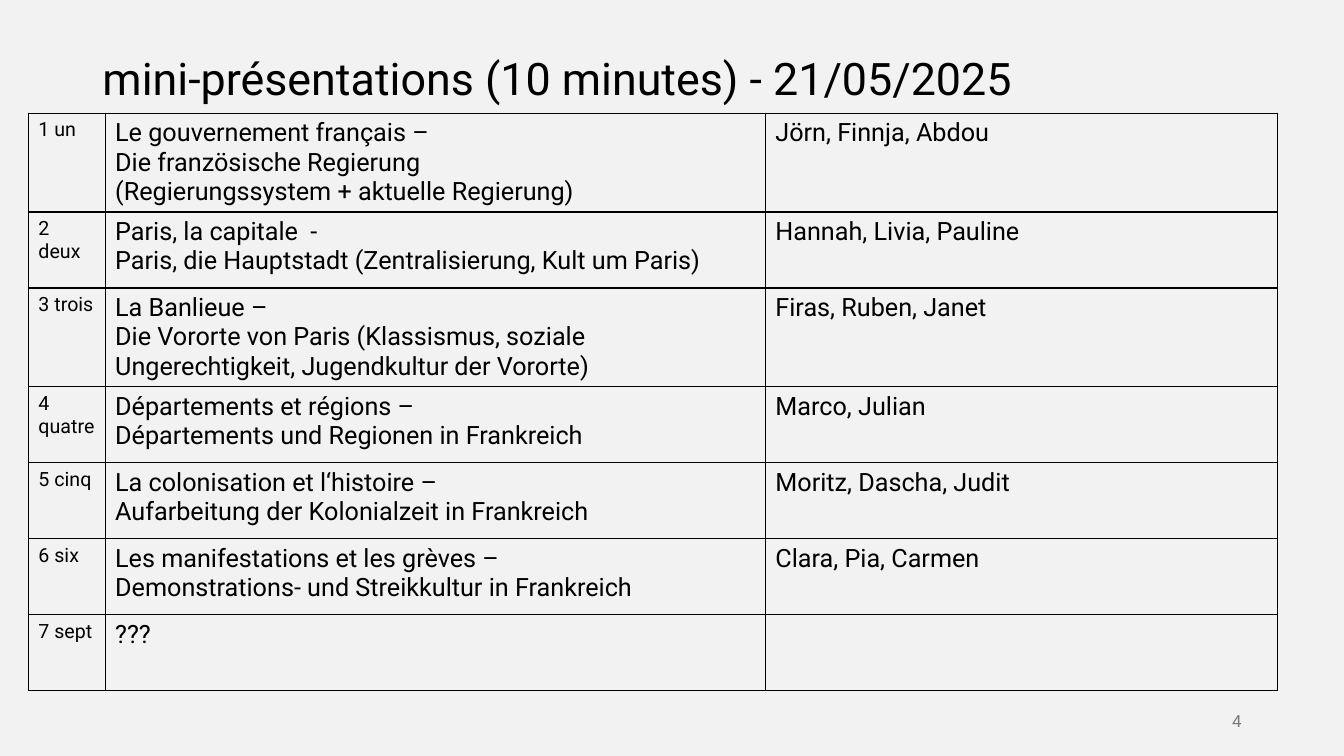
from pptx import Presentation
from pptx.dml.color import RGBColor
from pptx.enum.text import MSO_ANCHOR, PP_ALIGN
from pptx.oxml.ns import qn
from pptx.util import Pt
from lxml.etree import SubElement

BLACK = RGBColor(0x00, 0x00, 0x00)
GREY = RGBColor(0x79, 0x79, 0x79)
PALE = RGBColor(0xF2, 0xF2, 0xF2)

TOPICS = [
    ("1 un", "Le gouvernement français –\nDie französische Regierung\n"
     "(Regierungssystem + aktuelle Regierung)", "Jörn, Finnja, Abdou"),
    ("2 deux", "Paris, la capitale  -\n"
     "Paris, die Hauptstadt (Zentralisierung, Kult um Paris)",
     "Hannah, Livia, Pauline"),
    ("3 trois", "La Banlieue –\nDie Vororte von Paris (Klassismus, soziale "
     "Ungerechtigkeit, Jugendkultur der Vororte)", "Firas, Ruben, Janet"),
    ("4 quatre", "Départements et régions –\n"
     "Départements und Regionen in Frankreich", "Marco, Julian"),
    ("5 cinq", "La colonisation et l‘histoire –\n"
     "Aufarbeitung der Kolonialzeit in Frankreich", "Moritz, Dascha, Judit"),
    ("6 six", "Les manifestations et les grèves –\n"
     "Demonstrations- und Streikkultur in Frankreich", "Clara, Pia, Carmen"),
    ("7 sept", "???", ""),
]


class Deck:
    """Holds the style and the current slide, and adds elements to it."""

    font = "Roboto"

    def __init__(self, width, height):
        self.file = Presentation()
        self.file.slide_width, self.file.slide_height = Pt(width), Pt(height)
        self.slide = self.file.slides.add_slide(self.file.slide_layouts[5])
        fill = self.slide.background.fill
        fill.solid()
        fill.fore_color.rgb = PALE

    def set_text(self, frame, text, size, color=BLACK, align=PP_ALIGN.LEFT):
        frame.text = text
        frame.word_wrap = True
        for para in frame.paragraphs:
            para.alignment = align
            para.font.name = self.font
            para.font.size = Pt(size)
            para.font.color.rgb = color

    def title(self, text, left, top, width, height):
        shape = self.slide.shapes.title
        shape.left, shape.top = Pt(left), Pt(top)
        shape.width, shape.height = Pt(width), Pt(height)
        frame = shape.text_frame
        self.set_text(frame, text, 32)
        frame.vertical_anchor = MSO_ANCHOR.TOP
        frame.margin_top = Pt(12)
        frame.paragraphs[0].line_spacing = 0.9

    def label(self, text, left, top, width, height, size, color, align):
        box = self.slide.shapes.add_textbox(
            Pt(left), Pt(top), Pt(width), Pt(height))
        self.set_text(box.text_frame, text, size, color, align)
        box.text_frame.vertical_anchor = MSO_ANCHOR.MIDDLE

    def border(self, cell):
        props = cell._tc.get_or_add_tcPr()
        for place, side in enumerate(("a:lnL", "a:lnR", "a:lnT", "a:lnB")):
            line = props.makeelement(qn(side), {"w": str(Pt(1))})
            props.insert(place, line)
            fill = SubElement(line, qn("a:solidFill"))
            SubElement(fill, qn("a:srgbClr"), val=str(BLACK))

    def table(self, rows, left, top, widths, height, row_height, sizes):
        table = self.slide.shapes.add_table(
            len(rows), len(widths), Pt(left), Pt(top),
            Pt(sum(widths)), Pt(height)).table
        table.first_row = table.horz_banding = False
        for col, width in zip(table.columns, widths):
            col.width = Pt(width)
        for row, texts in zip(table.rows, rows):
            row.height = Pt(row_height)
            for cell, text, size in zip(row.cells, texts, sizes):
                self.set_text(cell.text_frame, text, size)
                cell.fill.background()
                self.border(cell)


def main():
    deck = Deck(960, 540)
    deck.title("mini-présentations (10 minutes) - 21/05/2025",
               66, 28.75, 828, 104.4)
    deck.table(TOPICS, 20.3, 80.8, (54.8, 471.6, 365.8), 415.4, 54.3,
               (14, 18, 18))
    deck.label("4", 678, 500.5, 216, 28.75, 12, GREY, PP_ALIGN.RIGHT)
    deck.file.save("out.pptx")


if __name__ == "__main__":
    main()
